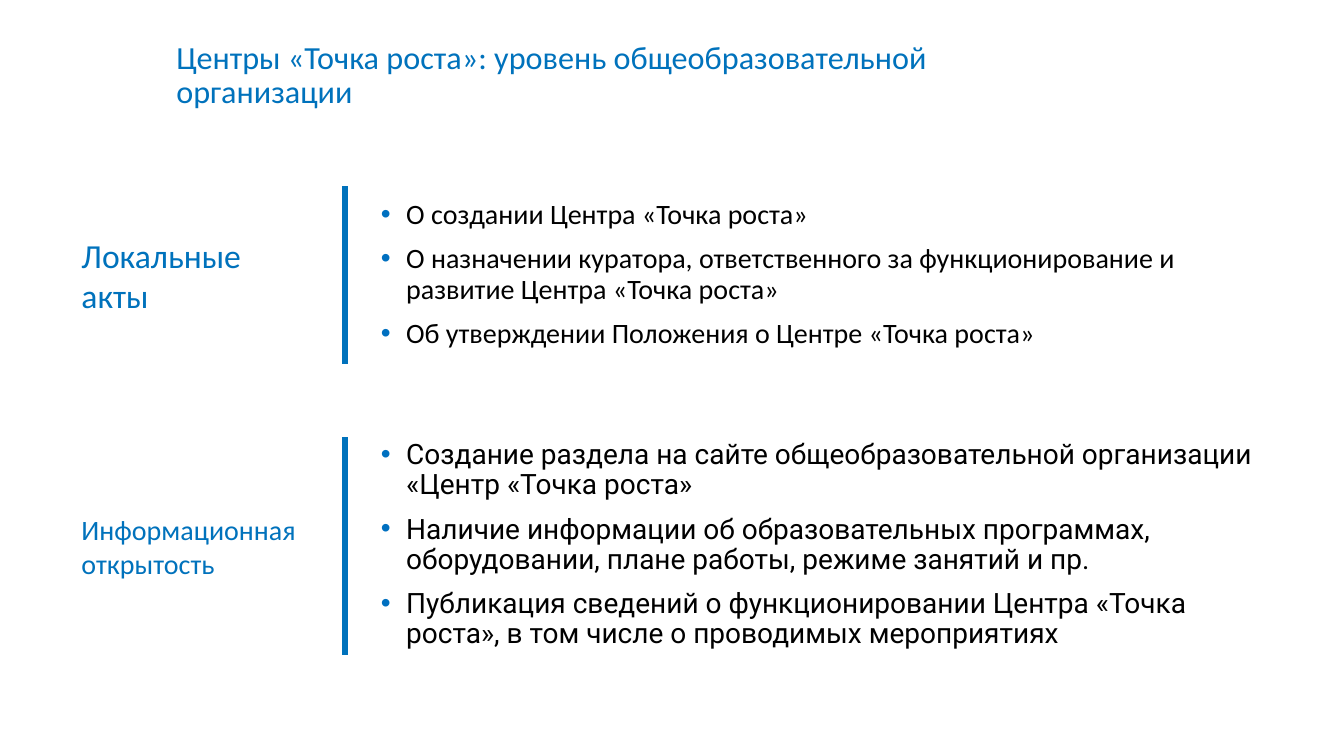
from dataclasses import dataclass

from lxml.etree import SubElement
from pptx import Presentation
from pptx.dml.color import RGBColor
from pptx.enum.shapes import MSO_CONNECTOR as CONN
from pptx.enum.text import MSO_ANCHOR as ANCHOR, MSO_AUTO_SIZE as AUTO
from pptx.oxml.ns import qn
from pptx.util import Inches, Pt

COLORS = {"blue": "0072BC", "bullet": "0070C0", "text": "000000"}
LABEL_X, BAR_X, LIST_X = 0.71, 3.42, 3.68


@dataclass
class Section:
    label: str
    label_box: tuple[float, float, float]  # top, width, height
    label_size: int
    bar: tuple[float, float]  # top, bottom
    list_box: tuple[float, float, float]  # top, width, height
    list_font: str
    items: list[str]


SECTIONS = [
    Section("Локальные акты", (2.28, 1.89, 0.91), 24, (1.85, 3.61),
            (1.94, 8.75, 2.2), "Calibri", [
                "О создании Центра «Точка роста»",
                "О назначении куратора, ответственного за функционирование и "
                "развитие Центра «Точка роста»",
                "Об утверждении Положения о Центре «Точка роста»",
            ]),
    Section("Информационная открытость", (5.04, 2.46, 0.77), 20, (4.34, 6.5),
            (4.32, 9.01, 2.38), "Roboto", [
                "Создание раздела на сайте общеобразовательной организации "
                "«Центр «Точка роста»",
                "Наличие информации об образовательных программах, "
                "оборудовании, плане работы, режиме занятий и пр.",
                "Публикация сведений о функционировании Центра «Точка роста», "
                "в том числе о проводимых мероприятиях",
            ]),
]


def add_bullet(p) -> None:
    pPr = p._p.get_or_add_pPr()
    pPr.set("marL", str(Inches(0.25)))
    pPr.set("indent", str(-Inches(0.25)))
    clr = SubElement(pPr, qn("a:buClr"))
    SubElement(clr, qn("a:srgbClr"), val=COLORS["bullet"])
    SubElement(pPr, qn("a:buFont"), typeface="Arial")
    SubElement(pPr, qn("a:buChar"), char="•")


def add_text(s, paragraphs: list[str], left: float, top: float, width: float,
             height: float, *, size: int, color: str = "blue",
             font: str = "Calibri", anchor=ANCHOR.TOP, auto_size=AUTO.NONE,
             line_spacing: float | None = None, bullets: bool = False) -> None:
    sp = s.shapes.add_textbox(Inches(left), Inches(top), Inches(width), Inches(height))
    tf = sp.text_frame
    tf.word_wrap = True
    tf.auto_size = auto_size
    tf.vertical_anchor = anchor
    for i, text in enumerate(paragraphs):
        p = tf.add_paragraph() if i else tf.paragraphs[0]
        p.line_spacing = line_spacing
        if bullets:
            p.space_before = Pt(10)
            add_bullet(p)
        r = p.add_run()
        r.text = text
        r.font.name = font
        r.font.size = Pt(size)
        r.font.color.rgb = RGBColor.from_string(COLORS[color])


def add_bar(s, top: float, bottom: float) -> None:
    bar = s.shapes.add_connector(CONN.STRAIGHT, Inches(BAR_X), Inches(top),
                                 Inches(BAR_X), Inches(bottom))
    bar.line.color.rgb = RGBColor.from_string(COLORS["blue"])
    bar.line.width = Pt(4.5)
    SubElement(bar._element.spPr, qn("a:effectLst"))


def add_section(s, section: Section) -> None:
    top, width, height = section.list_box
    add_text(s, section.items, LIST_X, top, width, height, size=20, color="text",
             font=section.list_font, line_spacing=0.9, bullets=True)
    top, width, height = section.label_box
    add_text(s, [section.label], LABEL_X, top, width, height,
             size=section.label_size, auto_size=AUTO.SHAPE_TO_FIT_TEXT)
    add_bar(s, *section.bar)


def main() -> None:
    prs = Presentation()
    prs.slide_width, prs.slide_height = Inches(13.33), Inches(7.5)
    s = prs.slides.add_slide(prs.slide_layouts[6])

    # Title
    add_text(s, ["Центры «Точка роста»: уровень общеобразовательной организации"],
             1.65, 0.16, 7.92, 1.19, size=23, anchor=ANCHOR.MIDDLE, line_spacing=0.9)

    # Labelled lists
    for section in SECTIONS:
        add_section(s, section)

    prs.save("out.pptx")


if __name__ == "__main__":
    main()
